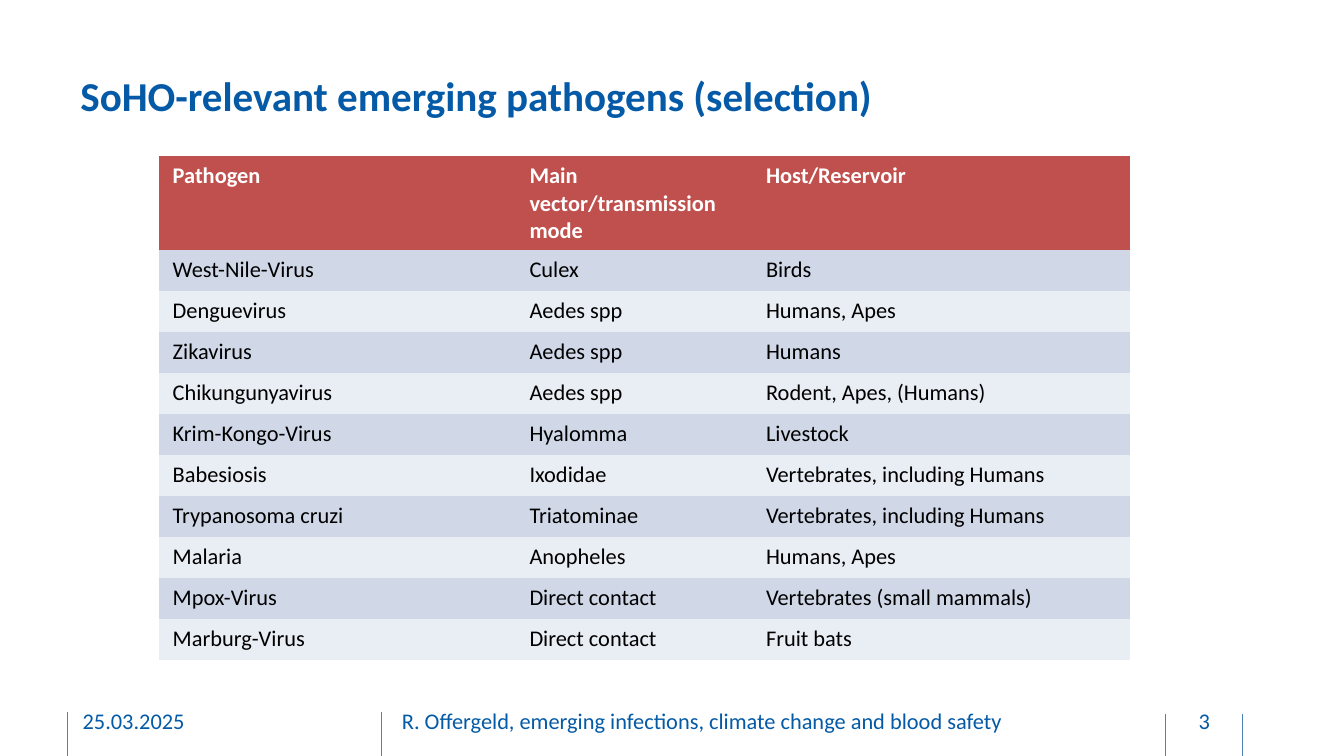
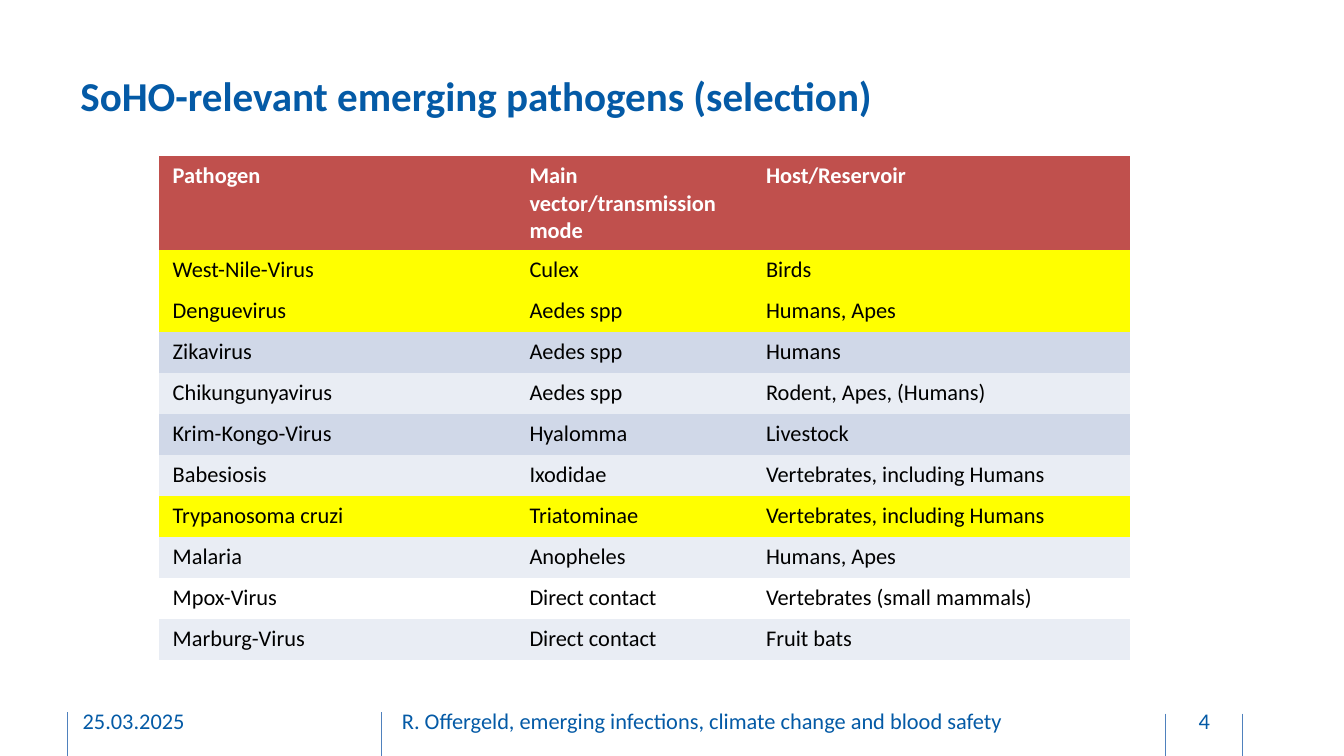
from lxml.etree import SubElement
from pptx import Presentation
from pptx.dml.color import RGBColor
from pptx.enum.shapes import MSO_CONNECTOR as CONN
from pptx.enum.text import MSO_ANCHOR as ANCHOR, PP_ALIGN as ALIGN
from pptx.oxml.ns import qn
from pptx.util import Emu, Pt

FONT = "Calibri"
BLUE, RULE = "045AA6", "4F81BD"
WHITE, BLACK = "FFFFFF", "000000"
HEADER, BANDS, MARK = "C0504D", ("D0D8E8", "E9EDF4"), "FFFF00"
NO_STYLE = "{2D5ABB26-0587-4C30-8999-92F81FD0307C}"

TITLE = "SoHO-relevant emerging pathogens (selection)"
DATE = "25.03.2025"
TALK = "R. Offergeld, emerging infections, climate change and blood safety"
FOOTER_RULES = [(1734, 1062, 1130), (568, 1060, 1128),
                (100, 1060, 1126), (1849, 1062, 1130)]

COLUMNS = [531, 352, 562]
HEADINGS = ["Pathogen", "Main vector/transmission mode", "Host/Reservoir"]
PATHOGENS = [
    ("West-Nile-Virus", "Culex", "Birds"),
    ("Denguevirus", "Aedes spp", "Humans, Apes"),
    ("Zikavirus", "Aedes spp", "Humans"),
    ("Chikungunyavirus", "Aedes spp", "Rodent, Apes, (Humans)"),
    ("Krim-Kongo-Virus", "Hyalomma", "Livestock"),
    ("Babesiosis", "Ixodidae", "Vertebrates, including Humans"),
    ("Trypanosoma cruzi", "Triatominae", "Vertebrates, including Humans"),
    ("Malaria", "Anopheles", "Humans, Apes"),
    ("Mpox-Virus", "Direct contact", "Vertebrates (small mammals)"),
    ("Marburg-Virus", "Direct contact", "Fruit bats"),
]
HIGHLIGHTS = {
    "West-Nile-Virus": MARK,
    "Denguevirus": MARK,
    "Trypanosoma cruzi": MARK,
    "Mpox-Virus": None,
}


def px(n):
    return Emu(n * 4572)


def rgb(color):
    return RGBColor.from_string(color)


def write(tf, text, size=12, color=BLUE, bold=False, align=ALIGN.LEFT):
    p = tf.paragraphs[0]
    p.alignment = align
    r = p.add_run()
    r.text = text
    r.font.name = FONT
    r.font.size = Pt(size)
    r.font.bold = bold
    r.font.color.rgb = rgb(color)


def add_text(s, box, text, anchor=ANCHOR.MIDDLE, left=0, right=0, **style):
    tf = s.shapes.add_textbox(*map(px, box)).text_frame
    tf.word_wrap = True
    tf.vertical_anchor = anchor
    tf.margin_left, tf.margin_right = px(left), px(right)
    write(tf, text, **style)


def add_rule(s, x, top, bottom):
    line = s.shapes.add_connector(CONN.STRAIGHT, px(x), px(top), px(x), px(bottom))
    line.line.color.rgb = rgb(RULE)
    line.line.width = Pt(0.5)
    SubElement(line._element.spPr, qn("a:effectLst"))


def fill_row(row, texts, fill, **style):
    row.height = px(61)
    for cell, text in zip(row.cells, texts):
        if fill:
            cell.fill.solid()
            cell.fill.fore_color.rgb = rgb(fill)
        else:
            cell.fill.background()
        write(cell.text_frame, text, **style)


def add_pathogen_table(s, highlights):
    frame = s.shapes.add_table(len(PATHOGENS) + 1, len(COLUMNS),
                               px(237), px(232), px(sum(COLUMNS)), px(751))
    table = frame.table
    table.horz_banding = False
    table._tbl.tblPr.find(qn("a:tableStyleId")).text = NO_STYLE
    for column, width in zip(table.columns, COLUMNS):
        column.width = px(width)
    fill_row(table.rows[0], HEADINGS, HEADER, color=WHITE, bold=True)
    for i, pathogen in enumerate(PATHOGENS):
        fill = highlights.get(pathogen[0], BANDS[i % 2])
        fill_row(table.rows[i + 1], pathogen, fill, color=BLACK)
    frame.height = px(751)


def add_footer(s, number):
    for rule in FOOTER_RULES:
        add_rule(s, *rule)
    add_text(s, (1738, 1043, 108, 60), str(number), align=ALIGN.CENTER)
    add_text(s, (123, 1043, 406, 60), DATE)
    add_text(s, (590, 1043, 1106, 60), TALK, left=8)


def add_slide(prs, number, highlights):
    s = prs.slides.add_slide(prs.slide_layouts[6])
    add_footer(s, number)
    add_text(s, (100, 95, 1746, 156), TITLE, anchor=ANCHOR.TOP,
             left=20, right=20, size=22, bold=True)
    add_pathogen_table(s, highlights)


def main():
    prs = Presentation()
    prs.slide_width, prs.slide_height = px(2000), px(1125)
    for number, highlights in ((3, {}), (4, HIGHLIGHTS)):
        add_slide(prs, number, highlights)
    prs.save("out.pptx")


if __name__ == "__main__":
    main()
